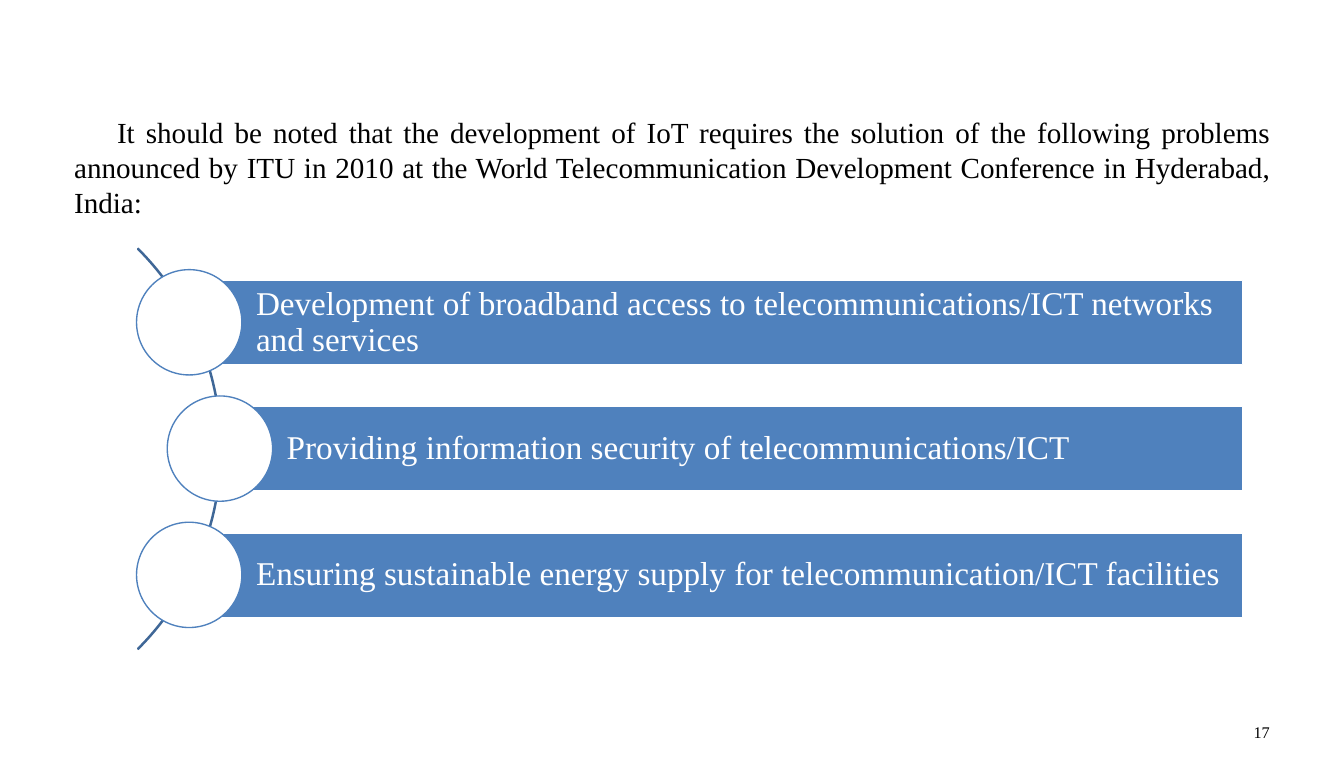
import pptx
import pptx.util
import pptx.dml.color
import pptx.enum.shapes
import pptx.enum.text

PX = 9144  # EMU in one px, 100 px to the inch
FONT = "Times New Roman"
INK = {"text": "000000", "white": "FFFFFF", "bar": "4F81BD", "arc": "3F6797"}
SHAPE = pptx.enum.shapes.MSO_SHAPE
ALIGN = pptx.enum.text.PP_ALIGN
ANCHOR = pptx.enum.text.MSO_ANCHOR

INTRO = ("It should be noted that the development of IoT requires the solution "
         "of the following problems announced by ITU in 2010 at the World "
         "Telecommunication Development Conference in Hyderabad, India:")
TASKS = [
    "Development of broadband access to telecommunications/ICT networks and services",
    "Providing information security of telecommunications/ICT",
    "Ensuring sustainable energy supply for telecommunication/ICT facilities",
]


def px(*nums):
    return [pptx.util.Emu(n * PX) for n in nums]


def rgb(name):
    return pptx.dml.color.RGBColor.from_string(INK[name])


def write(shape, text, size, color="text", align=ALIGN.LEFT,
          anchor=ANCHOR.MIDDLE, pad=(14, 7, 14, 7), indent=0,
          before=0, after=0, pitch=1.0):
    frame = shape.text_frame
    frame.word_wrap = True
    frame.vertical_anchor = anchor
    (frame.margin_left, frame.margin_top,
     frame.margin_right, frame.margin_bottom) = px(*pad)
    para = frame.paragraphs[0]
    para.alignment = align
    para.line_spacing = pitch
    para.space_before = pptx.util.Pt(before)
    para.space_after = pptx.util.Pt(after)
    if indent:
        para._p.get_or_add_pPr().set("indent", str(indent * PX))
    run = para.add_run()
    run.text = text
    run.font.name = FONT
    run.font.size = pptx.util.Pt(size)
    run.font.color.rgb = rgb(color)


def draw(slide, kind, box, line, fill=None):
    shape = slide.shapes.add_shape(kind, *px(*box))
    shape.shadow.inherit = False
    if fill:
        shape.fill.solid()
        shape.fill.fore_color.rgb = rgb(fill)
    else:
        shape.fill.background()
    shape.line.color.rgb = rgb(line)
    shape.line.width = pptx.util.Pt(2)
    return shape


def label(slide, box, text, size, **style):
    write(slide.shapes.add_textbox(*px(*box)), text, size, **style)


def curve(slide):
    arc = draw(slide, SHAPE.BLOCK_ARC, (-709, 339, 1163, 1163), "arc")
    # Angles of 315 and 45 degrees, then the thickness
    for i, value in enumerate((189, 27, 0.002)):
        arc.adjustments[i] = value


def task(slide, row, text):
    left = 451 if row == 1 else 388  # the middle row follows the curve
    top = 575 + 259 * row
    bar = draw(slide, SHAPE.RECTANGLE, (left, top, 2548 - left, 173),
               "white", "bar")
    write(bar, text, 49, color="white", pad=(137, 14, 14, 14),
          after=17, pitch=0.9)
    draw(slide, SHAPE.OVAL, (left - 108, top - 22, 216, 216), "bar", "white")


def main():
    deck = pptx.Presentation()
    deck.slide_width, deck.slide_height = px(2756, 1575)
    slide = deck.slides.add_slide(deck.slide_layouts[6])

    # Opening text
    label(slide, (138, 228, 2481, 339), INTRO, 43, align=ALIGN.JUSTIFY,
          anchor=ANCHOR.TOP, indent=88, before=9)

    # Curved list of tasks
    curve(slide)
    for row, text in enumerate(TASKS):
        task(slide, row, text)

    # Page number
    label(slide, (1975, 1460, 643, 84), "17", 24, align=ALIGN.RIGHT)

    deck.save("out.pptx")


if __name__ == "__main__":
    main()
